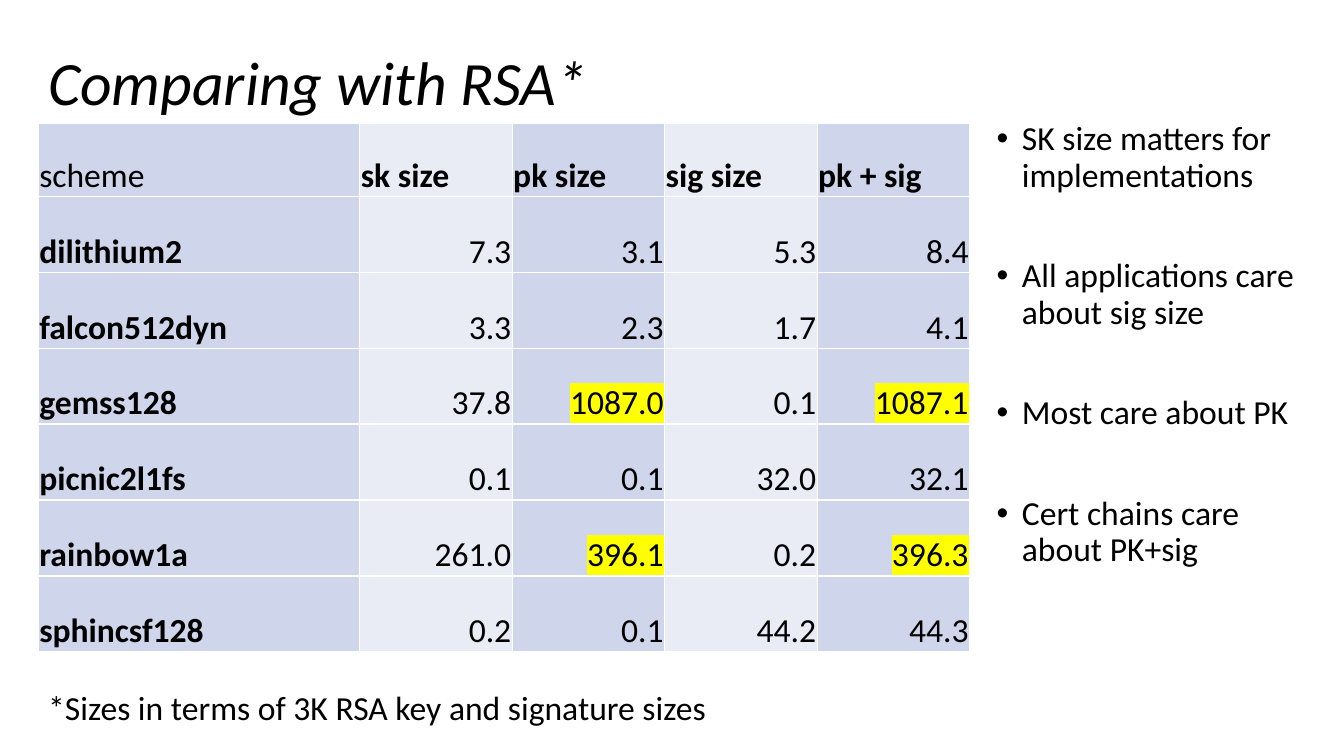
"""Build a slide comparing signature scheme sizes with RSA."""
from lxml import etree
from pptx import Presentation
from pptx.dml.color import RGBColor
from pptx.enum.text import MSO_ANCHOR, PP_ALIGN
from pptx.oxml.ns import qn
from pptx.util import Pt

TITLE = "Comparing with RSA*"
FOOTNOTE = "*Sizes in terms of 3K RSA key and signature sizes"
REMARKS = [
    "SK size matters for implementations",
    "All applications care about sig size",
    "Most care about PK",
    "Cert chains care about PK+sig",
]
SIZES = [
    ("scheme", "sk size", "pk size", "sig size", "pk + sig"),
    ("dilithium2", "7.3", "3.1", "5.3", "8.4"),
    ("falcon512dyn", "3.3", "2.3", "1.7", "4.1"),
    ("gemss128", "37.8", "1087.0", "0.1", "1087.1"),
    ("picnic2l1fs", "0.1", "0.1", "32.0", "32.1"),
    ("rainbow1a", "261.0", "396.1", "0.2", "396.3"),
    ("sphincsf128", "0.2", "0.1", "44.2", "44.3"),
]
HIGHLIGHTED = {"1087.0", "1087.1", "396.1", "396.3"}

FONT = "Calibri"
BODY_SIZE = 24
TITLE_SIZE = 44
BLACK = RGBColor(0, 0, 0)
WHITE = RGBColor(255, 255, 255)
YELLOW = RGBColor(255, 255, 0)
COLUMN_FILLS = (RGBColor(0xCF, 0xD5, 0xEA), RGBColor(0xE9, 0xEB, 0xF5))
TOP, MIDDLE, BOTTOM = MSO_ANCHOR.TOP, MSO_ANCHOR.MIDDLE, MSO_ANCHOR.BOTTOM
LEFT, RIGHT = PP_ALIGN.LEFT, PP_ALIGN.RIGHT

MARGIN = 27.36
TABLE_TOP = 87.84
SCHEME_WIDTH, SIZE_WIDTH = 229.68, 108.9
HEADER_HEIGHT, ROW_HEIGHT = 52.4, 54.25
CELL_INSET = 0.72
BULLET_INDENT = 18
FIRST_GAP, REMARK_GAP = 10, 46


def add_run(paragraph, text, size=BODY_SIZE, bold=False, italic=False):
    run = paragraph.add_run()
    run.text = text
    font = run.font
    font.name, font.size = FONT, Pt(size)
    font.bold, font.italic = bold, italic
    font.color.rgb = BLACK
    return run


def add_color(parent, color):
    etree.SubElement(parent, qn("a:srgbClr"), val=str(color))


def highlight(run):
    marker = etree.Element(qn("a:highlight"))
    add_color(marker, YELLOW)
    run.font.fill
    run.font._element.find(qn("a:solidFill")).addnext(marker)


def add_borders(cell):
    properties = cell._tc.get_or_add_tcPr()
    for position, side in enumerate(("a:lnL", "a:lnR", "a:lnT", "a:lnB")):
        line = etree.Element(qn(side), w=str(Pt(1)))
        add_color(etree.SubElement(line, qn("a:solidFill")), WHITE)
        properties.insert(position, line)


def add_text_frame(slide, left, top, width, height, anchor=TOP, wrap=True):
    box = slide.shapes.add_textbox(Pt(left), Pt(top), Pt(width), Pt(height))
    frame = box.text_frame
    frame.word_wrap = wrap
    frame.vertical_anchor = anchor
    return frame


def add_remarks(slide):
    frame = add_text_frame(slide, 704.88, 83.52, 227.52, 480.24)
    for index, remark in enumerate(REMARKS):
        paragraph = frame.add_paragraph() if index else frame.paragraphs[0]
        paragraph.line_spacing = 0.9
        paragraph.space_before = Pt(REMARK_GAP if index else FIRST_GAP)
        properties = paragraph._p.get_or_add_pPr()
        properties.set("marL", str(Pt(BULLET_INDENT)))
        properties.set("indent", str(Pt(-BULLET_INDENT)))
        etree.SubElement(properties, qn("a:buFont"), typeface="Arial")
        etree.SubElement(properties, qn("a:buChar"), char="•")
        add_run(paragraph, remark)


def fill_cell(cell, text, row, column):
    cell.margin_left = cell.margin_right = cell.margin_top = Pt(CELL_INSET)
    cell.margin_bottom = 0
    cell.vertical_anchor = BOTTOM
    cell.fill.solid()
    cell.fill.fore_color.rgb = COLUMN_FILLS[column % 2]
    add_borders(cell)
    paragraph = cell.text_frame.paragraphs[0]
    paragraph.alignment = RIGHT if row and column else LEFT
    run = add_run(paragraph, text, bold=(row == 0) != (column == 0))
    if text in HIGHLIGHTED:
        highlight(run)


def add_size_table(slide):
    widths = [SCHEME_WIDTH] + [SIZE_WIDTH] * (len(SIZES[0]) - 1)
    heights = [HEADER_HEIGHT] + [ROW_HEIGHT] * (len(SIZES) - 1)
    table = slide.shapes.add_table(
        len(heights), len(widths), Pt(MARGIN), Pt(TABLE_TOP),
        Pt(sum(widths)), Pt(sum(heights))).table
    table.first_row = table.horz_banding = False
    for column, width in zip(table.columns, widths):
        column.width = Pt(width)
    for row, height in zip(table.rows, heights):
        row.height = Pt(height)
    for row, texts in enumerate(SIZES):
        for column, text in enumerate(texts):
            fill_cell(table.cell(row, column), text, row, column)


def main():
    presentation = Presentation()
    presentation.slide_width, presentation.slide_height = Pt(960), Pt(540)
    slide = presentation.slides.add_slide(presentation.slide_layouts[6])

    title = add_text_frame(slide, MARGIN, 8.64, 828, 104.4, MIDDLE).paragraphs[0]
    title.line_spacing = 0.9
    add_run(title, TITLE, TITLE_SIZE, italic=True)

    add_remarks(slide)
    add_size_table(slide)

    footnote = add_text_frame(slide, MARGIN, 487.44, 488.88, 36, wrap=False)
    add_run(footnote.paragraphs[0], FOOTNOTE)
    presentation.save("out.pptx")


if __name__ == "__main__":
    main()
